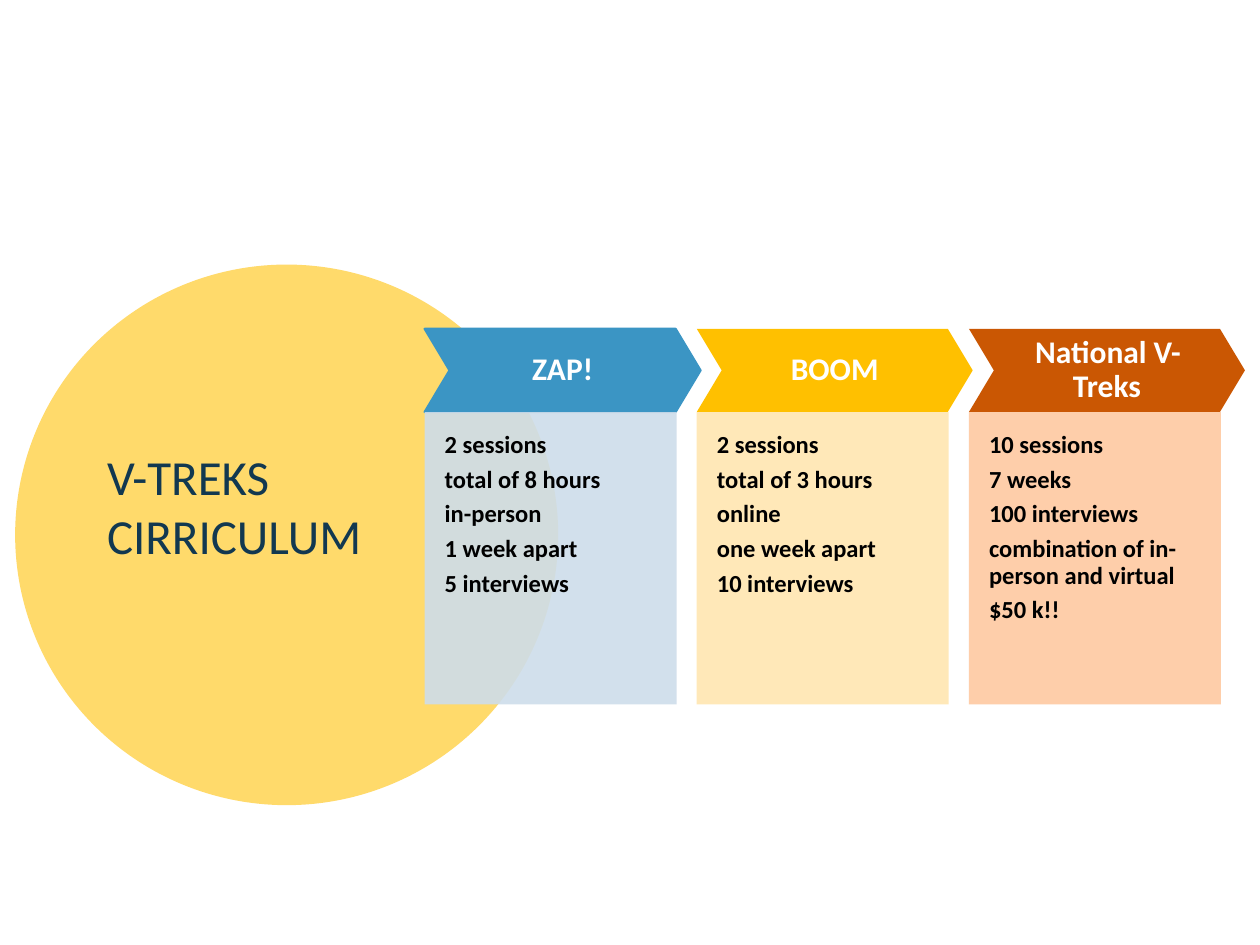
from lxml import etree
from pptx import Presentation
from pptx.dml.color import RGBColor
from pptx.enum import shapes, text
from pptx.oxml.ns import qn
from pptx.util import Inches, Pt

NAVY = RGBColor(0x12, 0x38, 0x50)
WHITE = RGBColor(0xFF, 0xFF, 0xFF)
BLACK = RGBColor(0, 0, 0)
BLUE = RGBColor(0x3B, 0x95, 0xC4)
PALE_BLUE = RGBColor(0xCE, 0xDD, 0xEA)
GOLD = RGBColor(0xFF, 0xC0, 0x00)
PALE_GOLD = RGBColor(0xFF, 0xD5, 0x79)
RUST = RGBColor(0xCA, 0x57, 0x03)
PALE_RUST = RGBColor(0xFE, 0xC9, 0xA1)

LEFT, STEP, TOP = 3.37, 2.16, 2.61
HEAD_W, HEAD_H = 2.19, 0.66
BODY_W, BODY_H = 2, 2.32

TITLE = ["V-TREKS", "CIRRICULUM"]
PROGRAMS = [
    ("ZAP!", BLUE, BLUE, PALE_BLUE, 90,
     ["2 sessions", "total of 8 hours", "in-person", "1 week apart", "5 interviews"]),
    ("BOOM", GOLD, None, PALE_GOLD, 53,
     ["2 sessions", "total of 3 hours", "online", "one week apart", "10 interviews"]),
    ("National V-Treks", RUST, None, PALE_RUST, 90,
     ["10 sessions", "7 weeks", "100 interviews",
      "combination of in-person and virtual", "$50 k!!"]),
]


def set_attrs(obj, values):
    """Set each named attribute of an object."""
    for name, value in values.items():
        setattr(obj, name, value)


def add_block(s, kind, box, fill, opacity=100, line=None):
    """Add a flat filled preset shape."""
    sp = s.shapes.add_shape(kind, *map(Inches, box))
    sp.shadow.inherit = False
    sp.fill.solid()
    sp.fill.fore_color.rgb = fill
    if opacity < 100:
        color = sp.fill._xPr.find(qn("a:solidFill"))[0]
        etree.SubElement(color, qn("a:alpha"), val=str(opacity * 1000))
    if line is None:
        sp.line.fill.background()
    else:
        sp.line.color.rgb = line
        sp.line.width = Pt(1.25)
    return sp


def add_lines(sp, lines, size, color, anchor, insets, para, bold=True):
    """Write one paragraph per line into a shape."""
    tf = sp.text_frame
    sides = ("margin_left", "margin_top", "margin_right", "margin_bottom")
    set_attrs(tf, dict(zip(sides, map(Inches, insets))))
    set_attrs(tf, {"word_wrap": True, "vertical_anchor": anchor})
    for i, line in enumerate(lines):
        p = tf.add_paragraph() if i else tf.paragraphs[0]
        set_attrs(p, para)
        r = p.add_run()
        r.text = line
        set_attrs(r.font, {"name": "Calibri", "size": Pt(size), "bold": bold})
        r.font.color.rgb = color


def add_title_circle(s):
    """Add the large circle that carries the title."""
    sp = add_block(s, shapes.MSO_SHAPE.OVAL, (0.12, 2.1, 4.31, 4.29), GOLD, 58)
    add_lines(sp, TITLE, 28, NAVY, text.MSO_ANCHOR.MIDDLE, (0.1, 0.05, 0.1, 0.52),
              {"alignment": text.PP_ALIGN.LEFT}, bold=False)


def add_program(s, left, name, fill, line, pale, opacity, details):
    """Add a program's chevron heading and the panel below it."""
    head = add_block(s, shapes.MSO_SHAPE.CHEVRON, (left, TOP, HEAD_W, HEAD_H), fill, line=line)
    head.adjustments[0] = 0.3
    add_lines(head, [name], 18, WHITE, text.MSO_ANCHOR.MIDDLE, [0.08] * 4,
              {"alignment": text.PP_ALIGN.CENTER, "line_spacing": 0.9})
    body = add_block(s, shapes.MSO_SHAPE.RECTANGLE, (left, TOP + HEAD_H, BODY_W, BODY_H),
                     pale, opacity)
    add_lines(body, details, 14, BLACK, text.MSO_ANCHOR.TOP, (0.16, 0.16, 0.16, 0.32),
              {"alignment": text.PP_ALIGN.LEFT, "line_spacing": 0.9, "space_after": Pt(4.7)})


def main():
    """Build the curriculum slide."""
    prs = Presentation()
    set_attrs(prs, {"slide_width": Inches(10), "slide_height": Inches(7.5)})
    s = prs.slides.add_slide(prs.slide_layouts[6])
    add_title_circle(s)
    for i, program in enumerate(PROGRAMS):
        add_program(s, LEFT + i * STEP, *program)
    prs.save("out.pptx")


if __name__ == "__main__":
    main()
